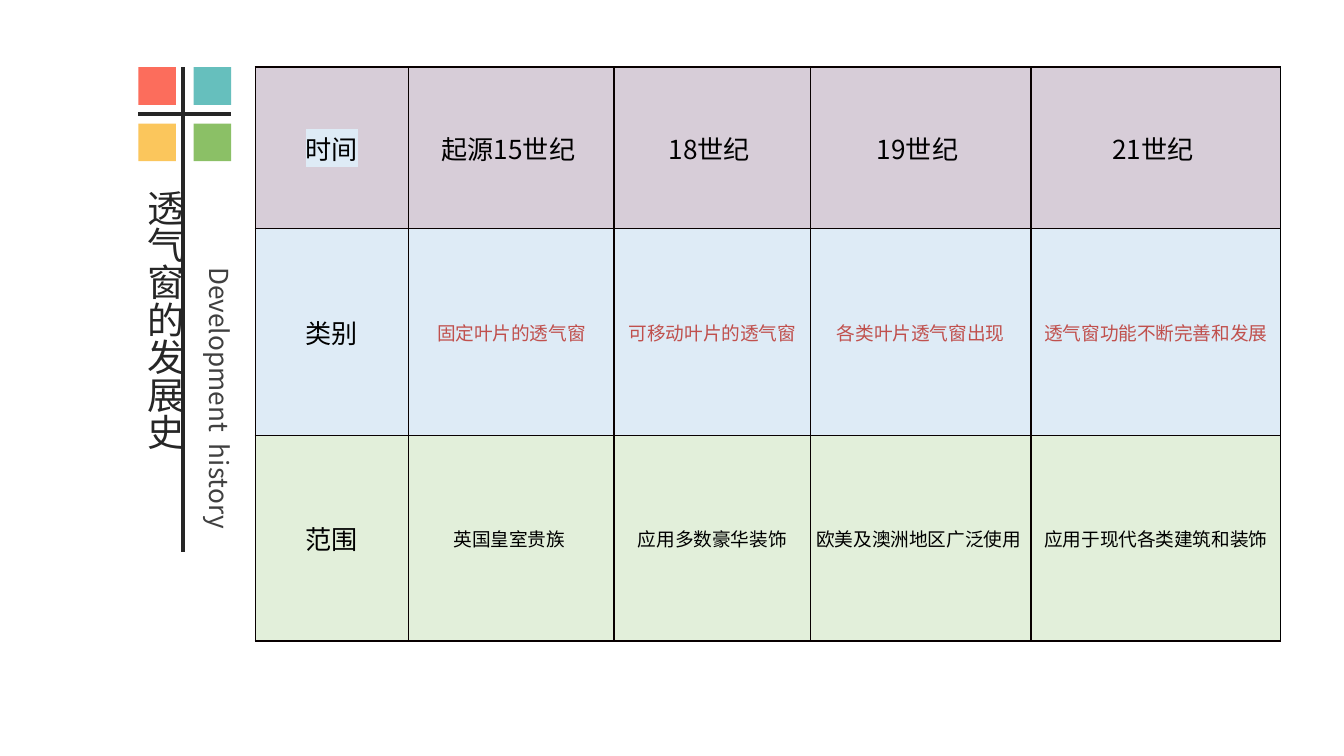
from dataclasses import dataclass

from lxml import etree
from pptx import Presentation
from pptx.dml.color import RGBColor
from pptx.enum.shapes import MSO_CONNECTOR, MSO_SHAPE
from pptx.enum.text import MSO_ANCHOR, MSO_AUTO_SIZE, PP_ALIGN
from pptx.oxml.ns import qn
from pptx.util import Inches, Pt

RECT = MSO_SHAPE.RECTANGLE
STRAIGHT = MSO_CONNECTOR.STRAIGHT
MIDDLE = MSO_ANCHOR.MIDDLE
CENTER = PP_ALIGN.CENTER
FIT_SHAPE = MSO_AUTO_SIZE.SHAPE_TO_FIT_TEXT


@dataclass(frozen=True)
class Theme:
    font: str = "Noto Sans CJK SC"
    title: str = "262626"
    subtitle: str = "404040"
    text: str = "000000"
    accent: str = "C0504D"
    highlight: str = "DEEBF6"
    border: str = "080000"
    border_right: str = "000000"
    row_fills: tuple = ("D7CDD8", "DEEBF6", "E2EFDA")
    tiles: tuple = (("FC6D5C", "66BFBD"), ("FBC65C", "8BC066"))
    title_size: int = 20
    label_size: int = 14
    body_size: int = 10


THEME = Theme()

COL_WIDTHS = (1.14, 1.53, 1.46, 1.64, 1.86)
ROW_HEIGHTS = (1.2, 1.54, 1.53)
ROWS = (
    ("时间", "起源15世纪 ", "18世纪 ", "19世纪 ", "21世纪 "),
    ("类别", "固定叶片的透气窗", "可移动叶片的透气窗", "各类叶片透气窗出现",
     "透气窗功能不断完善和发展"),
    ("范围", "英国皇室贵族 ", "应用多数豪华装饰", "欧美及澳洲地区广泛使用 ",
     "应用于现代各类建筑和装饰"),
)


def rgb(color):
    return RGBColor.from_string(color)


def style_run(r, size, color):
    r.font.size = Pt(size)
    r.font.color.rgb = rgb(color)
    r.font.name = THEME.font
    ea = etree.Element(qn("a:ea"), typeface=THEME.font)
    r.font._element.find(qn("a:latin")).addnext(ea)


def highlight_run(r, color):
    hl = etree.Element(qn("a:highlight"))
    etree.SubElement(hl, qn("a:srgbClr"), val=color)
    r.font._element.find(qn("a:solidFill")).addnext(hl)


def add_tile(s, x, y, size, color):
    sp = s.shapes.add_shape(RECT, Inches(x), Inches(y), Inches(size), Inches(size))
    sp.shadow.inherit = False
    sp.fill.solid()
    sp.fill.fore_color.rgb = rgb(color)
    sp.line.fill.background()


def add_line(s, x1, y1, x2, y2):
    cn = s.shapes.add_connector(STRAIGHT, Inches(x1), Inches(y1), Inches(x2), Inches(y2))
    cn.line.color.rgb = rgb(THEME.title)
    cn.line.width = Pt(2)
    etree.SubElement(cn._element.spPr, qn("a:effectLst"))


def add_vertical_text(s, x, y, w, h, text, size, color):
    tf = s.shapes.add_textbox(Inches(x), Inches(y), Inches(w), Inches(h)).text_frame
    tf.word_wrap = False
    tf.auto_size = FIT_SHAPE
    tf._txBody.bodyPr.set("vert", "eaVert")
    tf.text = text
    style_run(tf.paragraphs[0].runs[0], size, color)


def set_borders(cell, right):
    """Draw all four edges; right is the (colour, width) of the right one."""
    edge = (THEME.border, 1)
    tc_pr = cell._tc.get_or_add_tcPr()
    sides = (("L", edge), ("R", right), ("T", edge), ("B", edge))
    for i, (side, (color, width)) in enumerate(sides):
        ln = etree.Element(qn(f"a:ln{side}"), w=str(Pt(width)))
        fill = etree.SubElement(ln, qn("a:solidFill"))
        etree.SubElement(fill, qn("a:srgbClr"), val=color)
        tc_pr.insert(i, ln)


def fill_cell(cell, text, fill, size, color):
    cell.fill.solid()
    cell.fill.fore_color.rgb = rgb(fill)
    cell.margin_left = cell.margin_right = cell.margin_top = cell.margin_bottom = 0
    cell.vertical_anchor = MIDDLE
    cell.text_frame.text = text
    p = cell.text_frame.paragraphs[0]
    p.alignment = CENTER
    style_run(p.runs[0], size, color)


def add_history_table(s, x, y):
    table = s.shapes.add_table(
        len(ROWS), len(COL_WIDTHS), Inches(x), Inches(y),
        Inches(sum(COL_WIDTHS)), Inches(sum(ROW_HEIGHTS))).table
    for col, width in zip(table.columns, COL_WIDTHS):
        col.width = Inches(width)
    for row, height in zip(table.rows, ROW_HEIGHTS):
        row.height = Inches(height)
    for i, texts in enumerate(ROWS):
        for j, text in enumerate(texts):
            cell = table.cell(i, j)
            is_label = i == 0 or j == 0
            size = THEME.label_size if is_label else THEME.body_size
            color = THEME.accent if i == 1 and j > 0 else THEME.text
            fill_cell(cell, text, THEME.row_fills[i], size, color)
            set_borders(cell, (THEME.border_right, 0.75) if j else (THEME.border, 1))
    highlight_run(table.cell(0, 0).text_frame.paragraphs[0].runs[0], THEME.highlight)


def main():
    # Widescreen slide, 16:9
    prs = Presentation()
    prs.slide_width = Inches(10)
    prs.slide_height = Inches(10 * 9 / 16)
    s = prs.slides.add_slide(prs.slide_layouts[6])

    # Window emblem: four panes
    for i, colors in enumerate(THEME.tiles):
        for j, color in enumerate(colors):
            add_tile(s, 1.03 + 0.41 * j, 0.5 + 0.42 * i, 0.28, color)

    # Vertical title and subtitle
    add_vertical_text(s, 0.91, 1.31, 0.53, 2.04, "透气窗的发展史",
                      THEME.title_size, THEME.title)
    add_vertical_text(s, 1.35, 1.89, 0.45, 2.11, "Development  history",
                      THEME.label_size, THEME.subtitle)

    # Cross bars of the emblem
    add_line(s, 1.36, 0.5, 1.36, 4.11)
    add_line(s, 1.03, 0.85, 1.72, 0.85)

    # History table
    add_history_table(s, 1.9, 0.5)

    prs.save("out.pptx")


if __name__ == "__main__":
    main()
